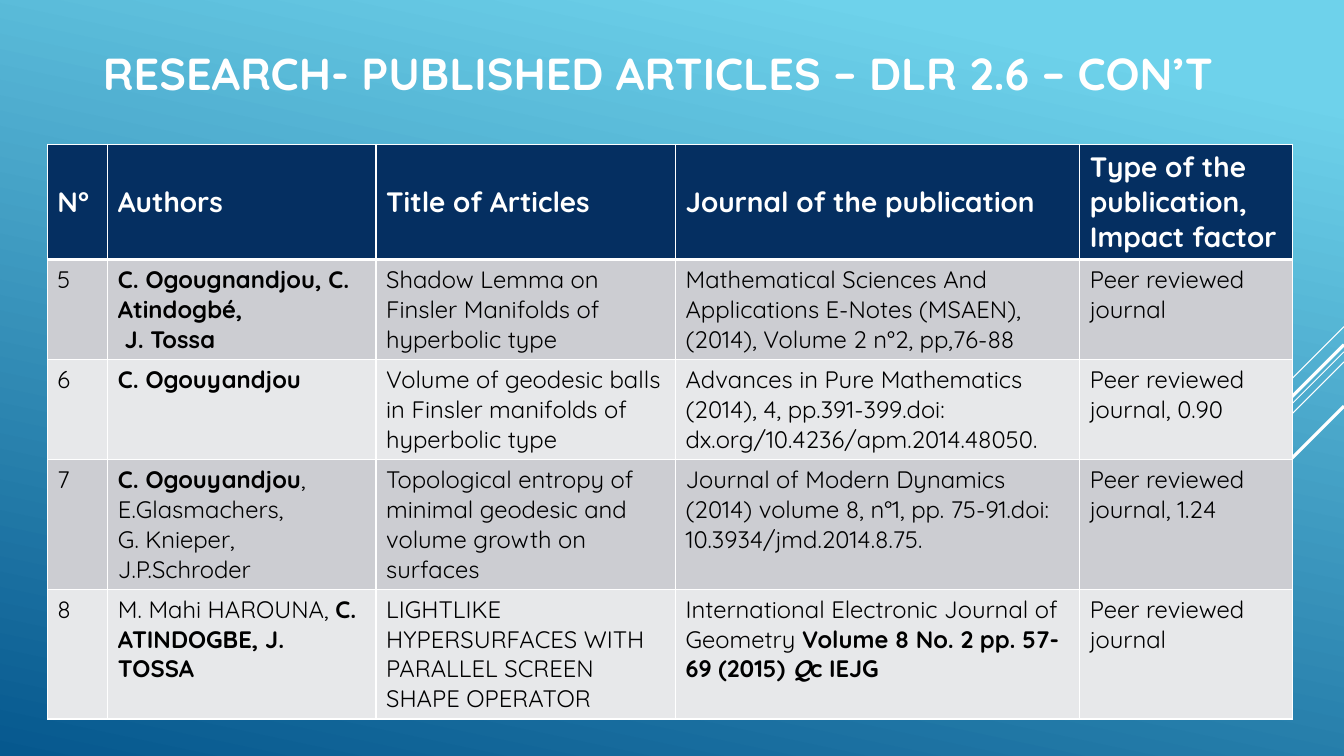
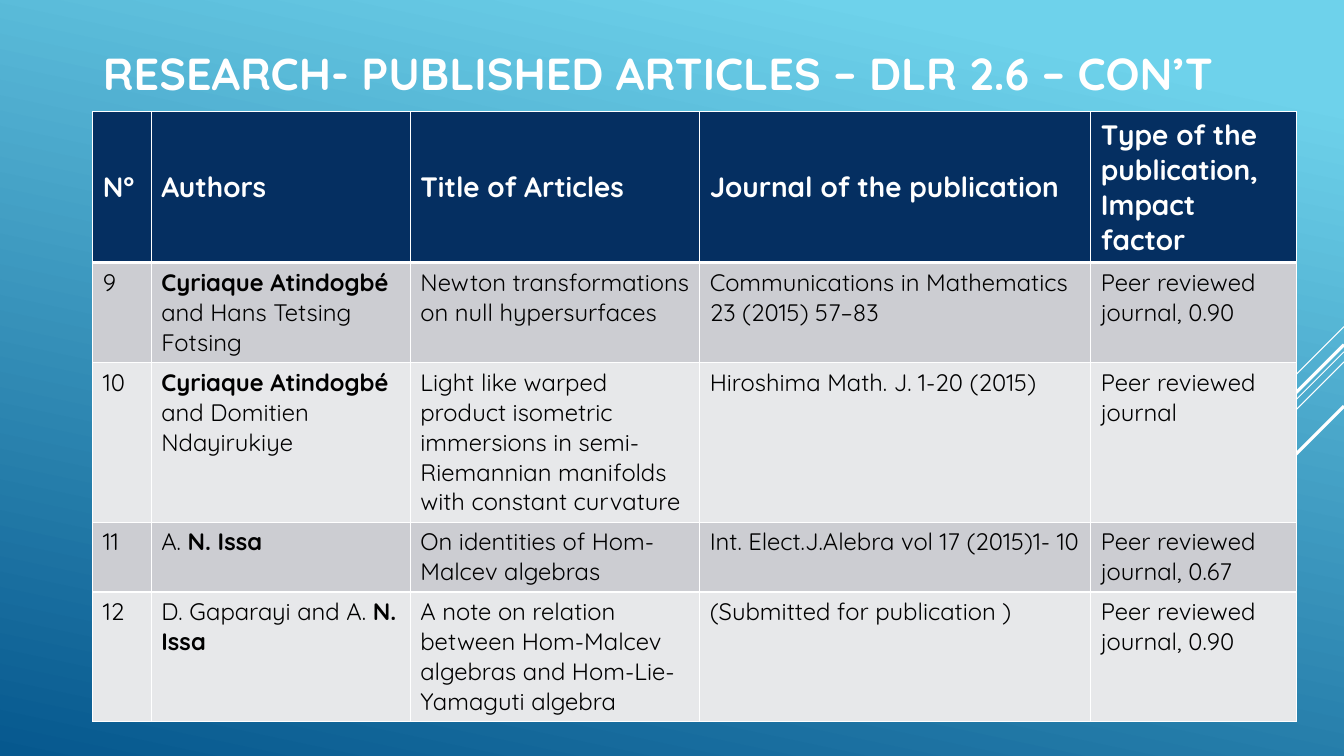
from lxml import etree
from pptx import Presentation
from pptx.dml.color import RGBColor
from pptx.enum.shapes import MSO_CONNECTOR
from pptx.enum.text import MSO_ANCHOR, PP_ALIGN
from pptx.oxml.ns import qn
from pptx.util import Inches, Pt

STRAIGHT = MSO_CONNECTOR.STRAIGHT
MIDDLE, TOP, LEFT = MSO_ANCHOR.MIDDLE, MSO_ANCHOR.TOP, PP_ALIGN.LEFT

FONT = "Quicksand"
WHITE, BLACK, NAVY = "FFFFFF", "000000", "052F61"
BAND_COLORS = ["CCCDD2", "E7E8EA"]
GRADIENT = [("6ED2EB", 0.1), ("06588E", 1.0)]
TITLE = "RESEARCH- PUBLISHED ARTICLES – DLR 2.6 – CON’T"
HEADERS = ["N°", "Authors", "Title of Articles", "Journal of the publication",
           "Type of the publication, Impact factor"]

# Diagonal lines: start y at the right edge, run (equal across and down), width
SLIDE_WIDTH = 13.33
DIAGONALS = [(3.24, 1.0, 0.75), (3.49, 3.26, 0.75), (3.59, 2.07, 0.75),
             (3.42, 1.91, 2.25), (4.03, 1.39, 2.25)]

# In cell text, * switches bold, ~ switches italic, a new line starts a paragraph
TABLES = [
    {
        "position": (0.47, 1.43),
        "columns": [0.6, 2.66, 2.97, 4.01, 2.11],
        "rows": [1.14, 0.98, 0.98, 1.28, 1.28],
        "articles": [
            ["5", "*C. Ogougnandjou, C. Atindogbé,*\n* J. Tossa*",
             "Shadow Lemma on Finsler Manifolds of hyperbolic type",
             "Mathematical Sciences And Applications E-Notes (MSAEN), (2014), "
             "Volume 2 n°2, pp,76-88",
             "Peer reviewed journal"],
            ["6", "*C. Ogouyandjou*",
             "Volume of geodesic balls in Finsler manifolds of hyperbolic type",
             "Advances in Pure Mathematics (2014), 4, pp.391-399.doi: "
             "dx.org/10.4236/apm.2014.48050.",
             "Peer reviewed journal, 0.90"],
            ["7", "*C. Ogouyandjou*,\nE.Glasmachers,\nG. Knieper,\nJ.P.Schroder",
             "Topological entropy of minimal geodesic and volume growth on surfaces",
             "Journal of Modern Dynamics (2014) volume 8, n°1, pp. 75-91.doi: "
             "10.3934/jmd.2014.8.75.",
             "Peer reviewed journal, 1.24"],
            ["8", "M. Mahi HAROUNA, *C. ATINDOGBE, J. TOSSA*",
             "LIGHTLIKE HYPERSURFACES WITH PARALLEL SCREEN SHAPE OPERATOR",
             "International Electronic Journal of Geometry "
             "*Volume 8 No. 2 pp. 57-69 (2015) ~Q~c IEJG*",
             "Peer reviewed journal"],
        ],
    },
    {
        "position": (0.92, 1.11),
        "columns": [0.58, 2.57, 2.87, 3.88, 2.04],
        "rows": [1.49, 0.98, 1.58, 0.69, 1.28],
        "articles": [
            ["9", "*Cyriaque Atindogbé* and Hans Tetsing Fotsing",
             "Newton transformations on null hypersurfaces",
             "Communications in Mathematics 23 (2015) 57–83",
             "Peer reviewed journal, 0.90"],
            ["10", "*Cyriaque Atindogbé* and Domitien Ndayirukiye",
             "Light like warped product isometric immersions in semi- "
             "Riemannian manifolds with constant curvature",
             "Hiroshima Math. J. 1-20 (2015)",
             "Peer reviewed journal"],
            ["11", "A. *N. Issa*",
             "On identities of Hom-Malcev algebras",
             "Int. Elect.J.Alebra vol 17 (2015)1- 10",
             "Peer reviewed journal, 0.67"],
            ["12", "D. Gaparayi and A. *N. Issa*",
             "A note on relation between Hom-Malcev algebras and "
             "Hom-Lie-Yamaguti algebra",
             "(Submitted for publication )",
             "Peer reviewed journal, 0.90"],
        ],
    },
]


def color(hex_string):
    return RGBColor.from_string(hex_string)


def set_borders(cell, widths):
    """Draw white left, right, top and bottom borders of the given point widths."""
    properties = cell._tc.get_or_add_tcPr()
    for index, (side, width) in enumerate(zip("LRTB", widths)):
        line = etree.Element(qn(f"a:ln{side}"), w=str(Pt(width)))
        fill = etree.SubElement(line, qn("a:solidFill"))
        etree.SubElement(fill, qn("a:srgbClr"), val=WHITE)
        properties.insert(index, line)


presentation = Presentation()
presentation.slide_width = Inches(SLIDE_WIDTH)
presentation.slide_height = Inches(7.5)

# Shared background gradient
background = presentation.slide_master.background.fill
background.gradient()
background.gradient_angle = 360 - 102
for stop, (stop_color, position) in zip(background.gradient_stops, GRADIENT):
    stop.color.rgb = color(stop_color)
    stop.position = position

# Shared title position
layout = presentation.slide_layouts[5]
title_area = layout.placeholders[0]
title_area.left, title_area.top = Inches(0.92), Inches(0)
title_area.width, title_area.height = Inches(11.5), Inches(1.45)

for content in TABLES:
    slide = presentation.slides.add_slide(layout)

    # Title
    title = slide.shapes.title
    title.text_frame.text = TITLE
    title.text_frame.vertical_anchor = MIDDLE
    paragraph = title.text_frame.paragraphs[0]
    paragraph.alignment = LEFT
    paragraph.font.name, paragraph.font.size = FONT, Pt(32)
    paragraph.font.bold = True
    paragraph.font.color.rgb = color(WHITE)

    # Diagonal lines at the right edge
    for start, run_length, width in DIAGONALS:
        diagonal = slide.shapes.add_connector(
            STRAIGHT, Inches(SLIDE_WIDTH), Inches(start),
            Inches(SLIDE_WIDTH - run_length), Inches(start + run_length))
        diagonal.line.color.rgb = color(WHITE)
        diagonal.line.width = Pt(width)
        etree.SubElement(diagonal._element.spPr, qn("a:effectLst"))

    # Table of articles
    left, top = content["position"]
    columns, rows = content["columns"], content["rows"]
    table = slide.shapes.add_table(
        len(rows), len(columns), Inches(left), Inches(top),
        Inches(sum(columns)), Inches(sum(rows))).table
    for column, width in zip(table.columns, columns):
        column.width = Inches(width)
    for row, height in zip(table.rows, rows):
        row.height = Inches(height)

    for row_index, texts in enumerate([HEADERS] + content["articles"]):
        is_header = row_index == 0
        row_fill = NAVY if is_header else BAND_COLORS[(row_index - 1) % 2]
        for column_index, text in enumerate(texts):
            cell = table.cell(row_index, column_index)
            cell.fill.solid()
            cell.fill.fore_color.rgb = color(row_fill)
            cell.vertical_anchor = MIDDLE if is_header else TOP
            set_borders(cell, (1, 1, 3 if row_index == 1 else 1, 3 if is_header else 1))

            for line_index, line_text in enumerate(text.split("\n")):
                if line_index:
                    paragraph = cell.text_frame.add_paragraph()
                else:
                    paragraph = cell.text_frame.paragraphs[0]
                paragraph.font.name = FONT
                paragraph.font.size = Pt(20 if is_header else 17)
                paragraph.font.color.rgb = color(WHITE if is_header else BLACK)
                for bold_index, bold_part in enumerate(line_text.split("*")):
                    for italic_index, part in enumerate(bold_part.split("~")):
                        if part:
                            run = paragraph.add_run()
                            run.text = part
                            run.font.bold = is_header or bold_index % 2 == 1
                            run.font.italic = italic_index % 2 == 1

presentation.save("out.pptx")
